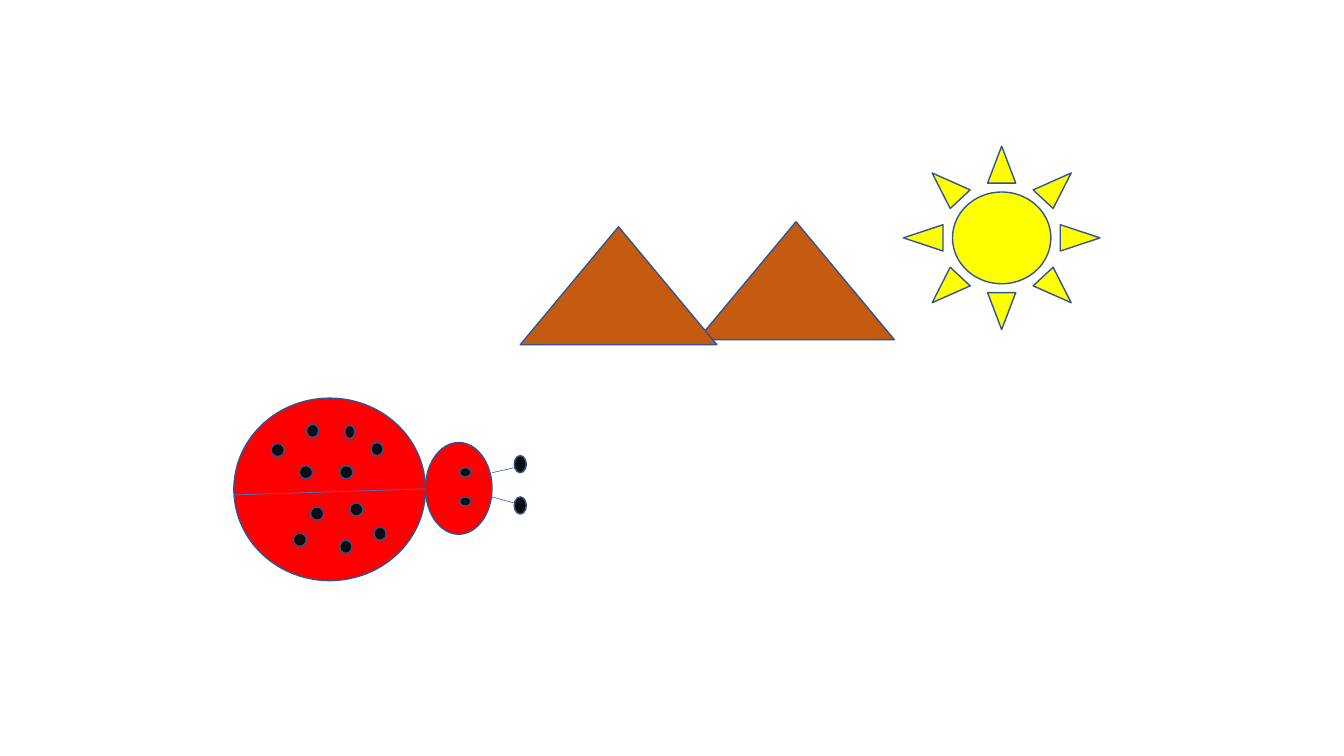
from pptx import Presentation
from pptx.dml.color import RGBColor
from pptx.enum.shapes import MSO_CONNECTOR, MSO_SHAPE
from pptx.oxml.ns import qn
from pptx.util import Inches, Pt
from lxml import etree

OVAL = MSO_SHAPE.OVAL
SUN = MSO_SHAPE.SUN
TRIANGLE = MSO_SHAPE.ISOSCELES_TRIANGLE
STRAIGHT = MSO_CONNECTOR.STRAIGHT

RED, BLACK, YELLOW, BROWN = "FF0000", "0D0D0D", "FFFF00", "C55A11"
OUTLINE, THIN_LINE = "325491", "4472C4"

# Left, top and width of each spot on the wings
SPOTS = [
    (3.04, 4.21, 0.12), (2.97, 4.62, 0.13), (3.68, 4.39, 0.12),
    (3.08, 5.03, 0.13), (2.91, 5.29, 0.13), (3.47, 4.99, 0.13),
    (3.37, 5.36, 0.12), (2.69, 4.4, 0.13), (3.42, 4.22, 0.1),
    (3.71, 5.23, 0.12), (3.37, 4.62, 0.13),
]
SPOT_HEIGHT = 0.13
EYE_TOPS = (4.64, 4.93)
# Start height, end height and tip top of each antenna
ANTENNAE = [(4.69, 4.64, 4.52), (4.93, 4.99, 4.93)]
MOUNTAINS = [(6.92, 2.2), (5.16, 2.25)]


def color(hex_string):
    return RGBColor.from_string(hex_string)


def add_figure(page, kind, left, top, width, height, fill):
    figure = page.shapes.add_shape(
        kind, Inches(left), Inches(top), Inches(width), Inches(height))
    figure.shadow.inherit = False
    figure.fill.solid()
    figure.fill.fore_color.rgb = color(fill)
    figure.line.color.rgb = color(OUTLINE)
    figure.line.width = Pt(1)


def add_thin_line(page, x1, y1, x2, y2):
    line = page.shapes.add_connector(
        STRAIGHT, Inches(x1), Inches(y1), Inches(x2), Inches(y2))
    line.line.color.rgb = color(THIN_LINE)
    line.line.width = Pt(0.5)
    etree.SubElement(line._element.spPr, qn("a:effectLst"))


def add_ladybird(page):
    # Body and head
    add_figure(page, OVAL, 2.32, 3.95, 1.9, 1.81, RED)
    add_figure(page, OVAL, 4.22, 4.39, 0.66, 0.91, RED)
    # Spots and eyes
    for left, top, width in SPOTS:
        add_figure(page, OVAL, left, top, width, SPOT_HEIGHT, BLACK)
    for top in EYE_TOPS:
        add_figure(page, OVAL, 4.56, top, 0.11, 0.09, BLACK)
    # Antennae with their tips
    for start, end, tip_top in ANTENNAE:
        add_thin_line(page, 4.88, start, 5.1, end)
        add_figure(page, OVAL, 5.1, tip_top, 0.12, 0.17, BLACK)
    # Seam between the wings
    add_thin_line(page, 4.22, 4.85, 2.32, 4.91)


def main():
    deck = Presentation()
    deck.slide_width = Inches(13.33)
    deck.slide_height = Inches(7.5)
    page = deck.slides.add_slide(deck.slide_layouts[6])

    add_ladybird(page)
    # Landscape
    add_figure(page, SUN, 8.96, 1.45, 1.95, 1.82, YELLOW)
    for left, top in MOUNTAINS:
        add_figure(page, TRIANGLE, left, top, 1.95, 1.17, BROWN)

    deck.save("out.pptx")


if __name__ == "__main__":
    main()
